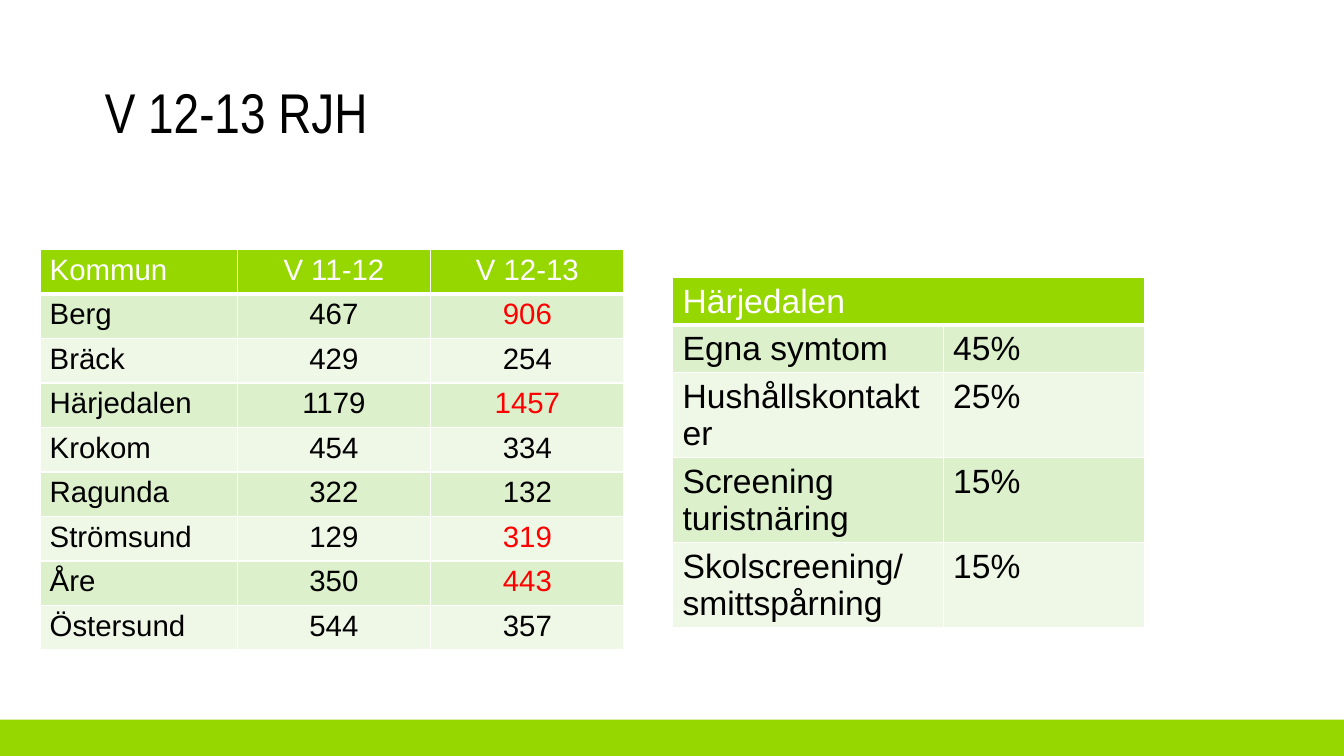
from lxml import etree
from pptx import Presentation
from pptx.dml.color import RGBColor
from pptx.enum.shapes import MSO_SHAPE
from pptx.enum.text import MSO_ANCHOR, MSO_AUTO_SIZE, PP_ALIGN
from pptx.oxml.ns import qn
from pptx.util import Pt

RECTANGLE = MSO_SHAPE.RECTANGLE
LEFT, CENTER = PP_ALIGN.LEFT, PP_ALIGN.CENTER
MIDDLE = MSO_ANCHOR.MIDDLE
NO_AUTOFIT = MSO_AUTO_SIZE.NONE

GREEN = RGBColor(0x97, 0xD7, 0x00)
BAND_DARK = RGBColor(0xDD, 0xF0, 0xCC)
BAND_LIGHT = RGBColor(0xEF, 0xF8, 0xE7)
BLACK = RGBColor(0x00, 0x00, 0x00)
WHITE = RGBColor(0xFF, 0xFF, 0xFF)
RED = RGBColor(0xFF, 0x00, 0x00)

PAGE_WIDTH, PAGE_HEIGHT = 960, 540
TITLE_ONLY = 5


class Page:
    """Holds the slide, its fonts and its table style."""

    title_font = "Arial Narrow"
    body_font = "Arial"

    def __init__(self, deck):
        self.slide = deck.slides.add_slide(deck.slide_layouts[TITLE_ONLY])

    def format_paragraph(self, para, font_name, size, color, align):
        para.alignment = align
        font = para.font
        font.name, font.size, font.bold = font_name, Pt(size), False
        font.color.rgb = color

    def bar(self, left, top, width, height):
        bar = self.slide.shapes.add_shape(
            RECTANGLE, Pt(left), Pt(top), Pt(width), Pt(height))
        bar.shadow.inherit = False
        bar.fill.solid()
        bar.fill.fore_color.rgb = GREEN
        bar.line.fill.background()

    def title(self, text, left, top, width, height):
        box = self.slide.shapes.title
        box.left, box.top = Pt(left), Pt(top)
        box.width, box.height = Pt(width), Pt(height)
        frame = box.text_frame
        frame.text = text
        frame.auto_size = NO_AUTOFIT
        frame.vertical_anchor = MIDDLE
        para = frame.paragraphs[0]
        para.line_spacing = 0.9
        self.format_paragraph(para, self.title_font, 40, BLACK, LEFT)

    def border(self, cell, is_header):
        properties = cell._tc.get_or_add_tcPr()
        for index, side in enumerate(("lnL", "lnR", "lnT", "lnB")):
            width = 3 if is_header and side == "lnB" else 1
            line = etree.Element(qn(f"a:{side}"), w=str(Pt(width)))
            fill = etree.SubElement(line, qn("a:solidFill"))
            etree.SubElement(fill, qn("a:srgbClr"), val=str(WHITE))
            properties.insert(index, line)

    def table(self, rows, left, top, widths, heights, size,
              number_align=LEFT, margins=(7.2, 3.6), red_cells=()):
        frame = self.slide.shapes.add_table(
            len(rows), len(widths), Pt(left), Pt(top),
            Pt(sum(widths)), Pt(sum(heights)))
        table = frame.table
        table.first_row = table.horz_banding = False
        for column, width in zip(table.columns, widths):
            column.width = Pt(width)
        for row, height in zip(table.rows, heights):
            row.height = Pt(height)

        for r, texts in enumerate(rows):
            is_header = r == 0
            band = GREEN if is_header else BAND_DARK if r % 2 else BAND_LIGHT
            for c, text in enumerate(texts):
                cell = table.cell(r, c)
                cell.margin_left = cell.margin_right = Pt(margins[0])
                cell.margin_top = cell.margin_bottom = Pt(margins[1])
                cell.fill.solid()
                cell.fill.fore_color.rgb = band
                self.border(cell, is_header)
                cell.text = text
                color = (WHITE if is_header
                         else RED if (r, c) in red_cells else BLACK)
                self.format_paragraph(
                    cell.text_frame.paragraphs[0], self.body_font, size,
                    color, number_align if c else LEFT)
        return table


def main():
    deck = Presentation()
    deck.slide_width, deck.slide_height = Pt(PAGE_WIDTH), Pt(PAGE_HEIGHT)
    page = Page(deck)

    # Footer bar and title
    page.bar(0, 514, PAGE_WIDTH, PAGE_HEIGHT - 514)
    page.title("V 12-13 RJH", 67.7, 56.9, 823.7, 51.1)

    # Cases by municipality, rising numbers in red
    cases = [
        ("Kommun", "V 11-12", "V 12-13"),
        ("Berg", "467", "906"),
        ("Bräck", "429", "254"),
        ("Härjedalen", "1179", "1457"),
        ("Krokom", "454", "334"),
        ("Ragunda", "322", "132"),
        ("Strömsund", "129", "319"),
        ("Åre", "350", "443"),
        ("Östersund", "544", "357"),
    ]
    rising = [(r, 2) for r, (_, before, after) in enumerate(cases)
              if r and int(after) > int(before)]
    page.table(cases, 29, 178.2, (140.4, 138.2, 138.2), [31.8] * len(cases),
               21, CENTER, (6.5, 3), rising)

    # Reasons for testing in Härjedalen
    reasons = [
        ("Härjedalen", ""),
        ("Egna symtom", "45%"),
        ("Hushållskontakter", "25%"),
        ("Screening turistnäring", "15%"),
        ("Skolscreening/\vsmittspårning", "15%"),
    ]
    table = page.table(reasons, 480.4, 198.3, (193.3, 144),
                       (32.4, 32.4, 32.4, 57.6, 57.6), 24)
    table.cell(0, 0).merge(table.cell(0, 1))

    deck.save("out.pptx")


if __name__ == "__main__":
    main()
